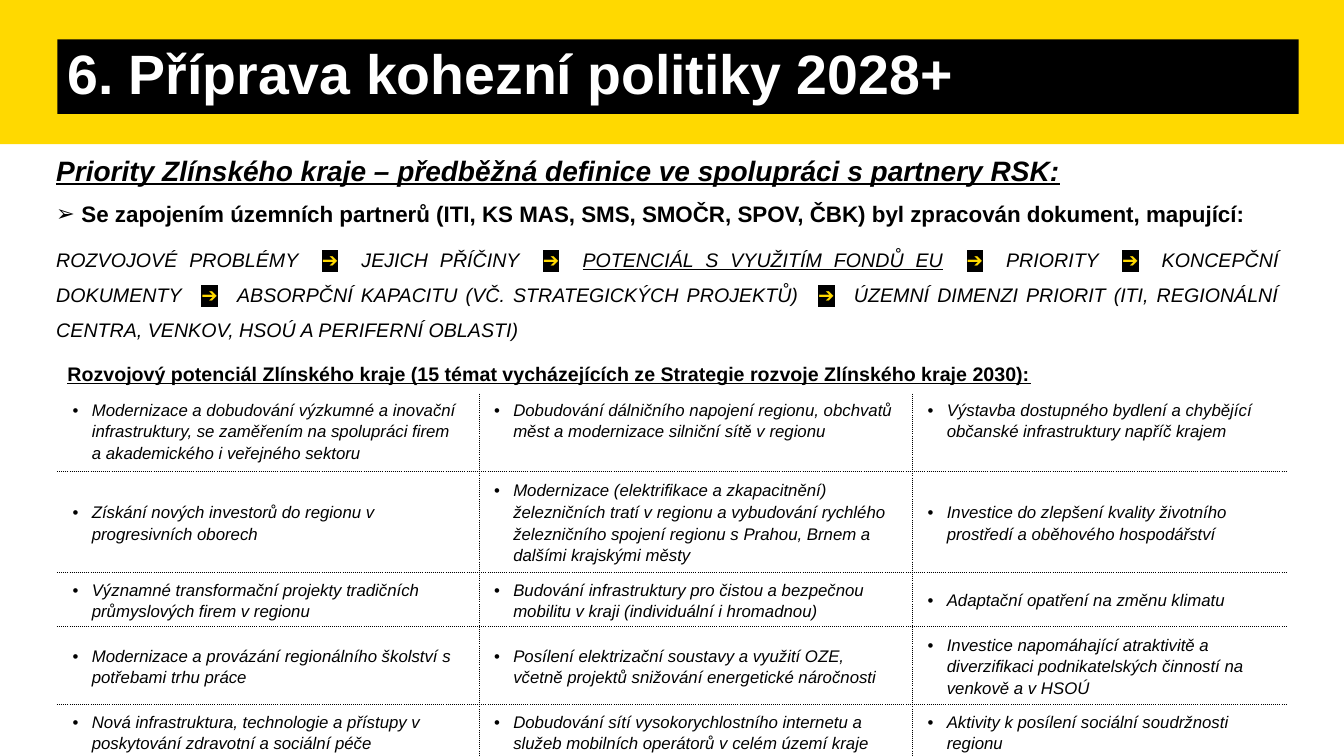
"""Builds the slide on preparing the cohesion policy 2028+."""
from lxml import etree
from pptx import Presentation
from pptx.dml.color import RGBColor
from pptx.enum.shapes import MSO_SHAPE
from pptx.enum.text import MSO_ANCHOR, PP_ALIGN
from pptx.oxml.ns import qn
from pptx.util import Inches, Pt

RECTANGLE = MSO_SHAPE.RECTANGLE
TOP, MIDDLE = MSO_ANCHOR.TOP, MSO_ANCHOR.MIDDLE
LEFT, JUSTIFY = PP_ALIGN.LEFT, PP_ALIGN.JUSTIFY
WIDTH, HEIGHT = Inches(13.33), Inches(7.5)
COLORS = {"yellow": "FFD900", "black": "000000", "white": "FFFFFF"}
FONT = "Arial"
ARROW = "➔"
UNDERLINED_STEP = "POTENCIÁL S VYUŽITÍM FONDŮ EU"
STEPS = [
    "ROZVOJOVÉ PROBLÉMY",
    "JEJICH PŘÍČINY",
    UNDERLINED_STEP,
    "PRIORITY",
    "KONCEPČNÍ DOKUMENTY",
    "ABSORPČNÍ KAPACITU (VČ. STRATEGICKÝCH PROJEKTŮ)",
    "ÚZEMNÍ DIMENZI PRIORIT (ITI, REGIONÁLNÍ CENTRA, VENKOV, HSOÚ A PERIFERNÍ OBLASTI)",
]
COLUMN_SHARES = [31.36, 32.26, 27.83]
ROW_SHARES = [10.13, 13.33, 7.07, 10.13, 7.07]
TOPICS = [
    ["Modernizace a dobudování výzkumné a inovační infrastruktury, se zaměřením na spolupráci firem a akademického i veřejného sektoru",
     "Dobudování dálničního napojení regionu, obchvatů měst a modernizace silniční sítě v regionu",
     "Výstavba dostupného bydlení a chybějící občanské infrastruktury napříč krajem"],
    ["Získání nových investorů do regionu v progresivních oborech",
     "Modernizace (elektrifikace a zkapacitnění) železničních tratí v regionu a vybudování rychlého železničního spojení regionu s Prahou, Brnem a dalšími krajskými městy",
     "Investice do zlepšení kvality životního prostředí a oběhového hospodářství"],
    ["Významné transformační projekty tradičních průmyslových firem v regionu",
     "Budování infrastruktury pro čistou a bezpečnou mobilitu v kraji (individuální i hromadnou)",
     "Adaptační opatření na změnu klimatu"],
    ["Modernizace a provázání regionálního školství s potřebami trhu práce",
     "Posílení elektrizační soustavy a využití OZE, včetně projektů snižování energetické náročnosti",
     "Investice napomáhající atraktivitě a diverzifikaci podnikatelských činností na venkově a v HSOÚ"],
    ["Nová infrastruktura, technologie a přístupy v poskytování zdravotní a sociální péče",
     "Dobudování sítí vysokorychlostního internetu a služeb mobilních operátorů v celém území kraje",
     "Aktivity k posílení sociální soudržnosti regionu"],
]


def across(share):
    return int(WIDTH * share / 100)


def down(share):
    return int(HEIGHT * share / 100)


def place(left, top, width, height):
    return across(left), down(top), across(width), down(height)


def rgb(name):
    return RGBColor.from_string(COLORS[name])


def add_element(parent, tag, **attributes):
    return etree.SubElement(parent, qn(tag), attributes)


def add_color(parent, tag, name):
    add_element(add_element(parent, tag), "a:srgbClr", val=COLORS[name])


def add_bullet(paragraph, character, indent):
    properties = paragraph._p.get_or_add_pPr()
    properties.set("marL", str(Inches(indent)))
    properties.set("indent", str(-Inches(indent)))
    add_color(properties, "a:buClr", "black")
    add_element(properties, "a:buFont", typeface=FONT)
    add_element(properties, "a:buChar", char=character)


def style(paragraph, size, color="black", bold=False, italic=False, underline=False):
    font = paragraph.font
    font.name, font.size = FONT, Pt(size)
    font.bold, font.italic, font.underline = bold, italic, underline
    font.color.rgb = rgb(color)


def add_bar(slide, area, color):
    shape = slide.shapes.add_shape(RECTANGLE, *place(*area))
    shape.shadow.inherit = False
    shape.fill.solid()
    shape.fill.fore_color.rgb = rgb(color)
    shape.line.fill.background()
    return shape


def add_text(slide, area, text):
    frame = slide.shapes.add_textbox(*place(*area)).text_frame
    frame.word_wrap = True
    frame.text = text
    return frame


def add_title(slide, text):
    frame = add_bar(slide, (4.28, 5.2, 92.35, 9.87), "black").text_frame
    frame.word_wrap = True
    frame.vertical_anchor = MIDDLE
    frame.text = text
    paragraph = frame.paragraphs[0]
    paragraph.alignment = LEFT
    paragraph.line_spacing = 0.9
    style(paragraph, 39.6, "white", bold=True)


def add_run(paragraph, text):
    run = paragraph.add_run()
    run.text = text
    return run


def add_gap(paragraph):
    add_run(paragraph, " ")._r.get_or_add_rPr().set("spc", "800")


def add_arrow(paragraph):
    add_gap(paragraph)
    run = add_run(paragraph, ARROW)
    run.font.color.rgb = rgb("yellow")
    add_color(run._r.get_or_add_rPr(), "a:highlight", "black")
    add_gap(paragraph)


def add_steps(paragraph):
    paragraph.alignment = JUSTIFY
    paragraph.line_spacing = 1.5
    paragraph.space_before = paragraph.space_after = Pt(6)
    style(paragraph, 14, italic=True)
    for index, step in enumerate(STEPS):
        if index:
            add_arrow(paragraph)
        run = add_run(paragraph, step)
        if step == UNDERLINED_STEP:
            run.font.underline = True


def add_border(cell, side):
    line = add_element(cell._tc.get_or_add_tcPr(), "a:ln" + side, w=str(Pt(0.75)))
    add_color(line, "a:solidFill", "black")
    add_element(line, "a:prstDash", val="sysDot")


def fill_cell(cell, text, anchor, sides):
    cell.margin_left = cell.margin_right = Inches(0.15)
    cell.margin_top = cell.margin_bottom = Inches(0.04)
    cell.vertical_anchor = anchor
    for side in sides:
        add_border(cell, side)
    cell.fill.background()
    cell.text = text
    paragraph = cell.text_frame.paragraphs[0]
    paragraph.line_spacing = 1.15
    paragraph.space_after = Pt(8)
    add_bullet(paragraph, "•", 0.19)
    style(paragraph, 12, italic=True)


def add_topics(slide):
    area = place(4.28, 52.13, sum(COLUMN_SHARES), sum(ROW_SHARES))
    table = slide.shapes.add_table(len(TOPICS), len(COLUMN_SHARES), *area).table
    table.first_row = table.horz_banding = False
    for column, share in zip(table.columns, COLUMN_SHARES):
        column.width = across(share)
    for row, share in zip(table.rows, ROW_SHARES):
        row.height = down(share)
    last_row, last_column = len(TOPICS) - 1, len(COLUMN_SHARES) - 1
    for r, topics in enumerate(TOPICS):
        for c, topic in enumerate(topics):
            inner = {"L": c > 0, "R": c < last_column, "T": r > 0, "B": r < last_row}
            sides = [side for side, shown in inner.items() if shown]
            fill_cell(table.cell(r, c), topic, MIDDLE if r else TOP, sides)


def main():
    presentation = Presentation()
    presentation.slide_width, presentation.slide_height = WIDTH, HEIGHT
    slide = presentation.slides.add_slide(presentation.slide_layouts[6])
    add_bar(slide, (0, 0, 100, 19.07), "yellow")
    add_title(slide, "6. Příprava kohezní politiky 2028+")

    priorities = add_text(slide, (3.45, 19.6, 92.42, 6.8),
                          "Priority Zlínského kraje – předběžná definice ve spolupráci s partnery RSK:")
    style(priorities.paragraphs[0], 20, bold=True, italic=True, underline=True)

    mapping = add_text(slide, (3.45, 26.27, 92.42, 20),
                       "Se zapojením územních partnerů (ITI, KS MAS, SMS, SMOČR, SPOV, ČBK) byl zpracován dokument, mapující:")
    partners = mapping.paragraphs[0]
    partners.alignment = JUSTIFY
    partners.line_spacing = 0.9
    add_bullet(partners, "➢", 0.25)
    style(partners, 16, bold=True)
    add_steps(mapping.add_paragraph())

    heading = add_text(slide, (4.28, 47.2, 89.65, 4.53),
                       "Rozvojový potenciál Zlínského kraje (15 témat vycházejících ze Strategie rozvoje Zlínského kraje 2030):")
    style(heading.paragraphs[0], 14, bold=True, underline=True)
    add_topics(slide)
    presentation.save("out.pptx")


if __name__ == "__main__":
    main()
